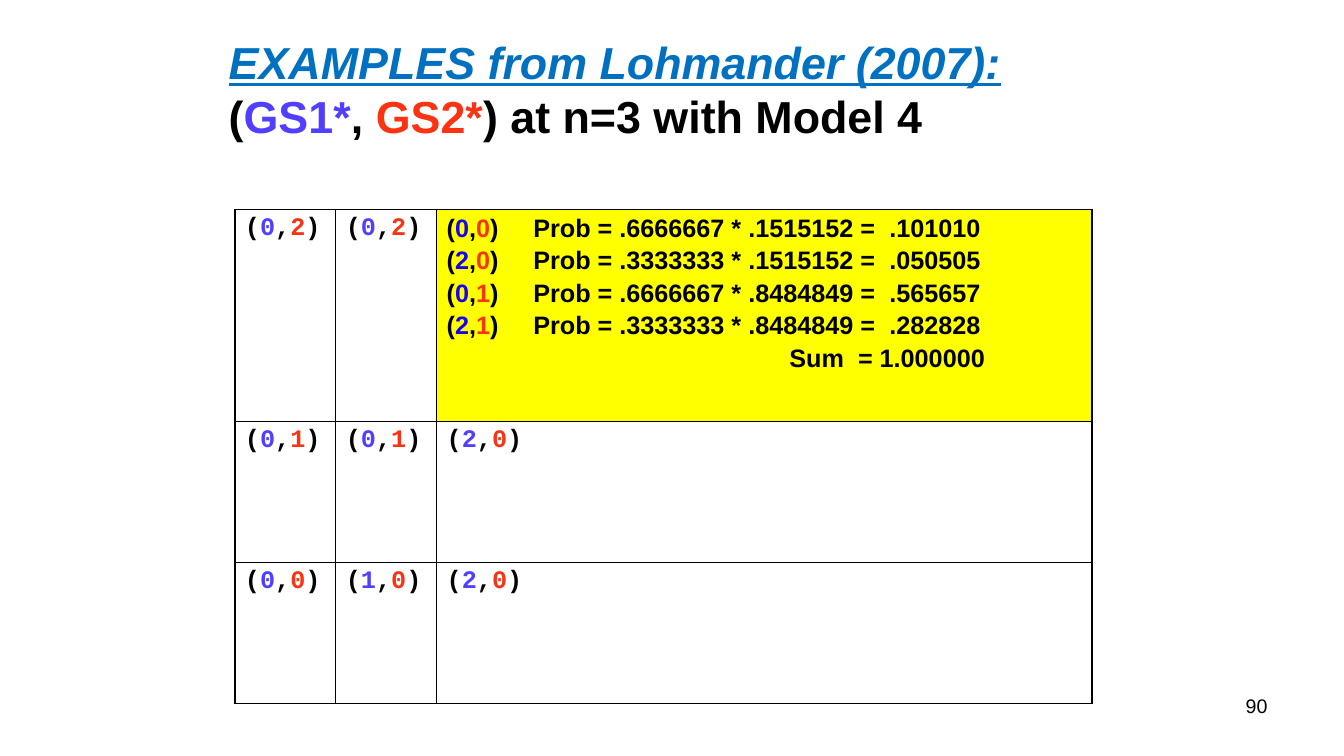
from lxml import etree
from pptx import Presentation
from pptx.dml.color import RGBColor
from pptx.enum.text import MSO_ANCHOR, PP_ALIGN
from pptx.oxml.ns import qn
from pptx.util import Inches, Pt

MIDDLE = MSO_ANCHOR.MIDDLE
RIGHT = PP_ALIGN.RIGHT

BLACK = RGBColor(0x00, 0x00, 0x00)
TITLE_BLUE = RGBColor(0x00, 0x70, 0xC0)
VIOLET = RGBColor(0x51, 0x3F, 0xFF)
DEEP_BLUE = RGBColor(0x17, 0x00, 0xF6)
RED = RGBColor(0xFA, 0x33, 0x12)
YELLOW = RGBColor(0xFF, 0xFF, 0x00)

HEADING = "EXAMPLES from Lohmander (2007):"
SUBHEADING = [("(", BLACK), ("GS1*", VIOLET), (", ", BLACK), ("GS2*", RED),
              (") at n=3 with Model 4", BLACK)]
PAGE_NUMBER = "90"

# Strategy pairs by row and column; None is the cell with the probabilities
PAIRS = [
    [(0, 2), (0, 2), None],
    [(0, 1), (0, 1), (2, 0)],
    [(0, 0), (1, 0), (2, 0)],
]
PROBABILITIES = [
    ((0, 0), ".6666667", ".1515152", ".101010"),
    ((2, 0), ".3333333", ".1515152", ".050505"),
    ((0, 1), ".6666667", ".8484849", ".565657"),
    ((2, 1), ".3333333", ".8484849", ".282828"),
]
SUM_LINE = "Sum\t= 1.000000"

TABLE_LEFT, TABLE_TOP = 2.33, 2.08
COLUMN_WIDTHS = [1, 1, 6.5]
ROW_HEIGHTS = [2.1, 1.4, 1.4]
PROB_TABS = [0.86, 4.39]
SUM_TABS = [3.4, 4.08]

TITLE_FORMAT = {"name": "Arial", "size": Pt(32), "bold": True}
HEADING_FORMAT = {**TITLE_FORMAT, "italic": True, "underline": True}
PAIR_FORMAT = {"name": "Courier New", "size": Pt(18), "bold": True}
PROB_FORMAT = {**PAIR_FORMAT, "name": "Arial"}
NUMBER_FORMAT = {"name": "Arial", "size": Pt(14)}


def add_spans(para, spans, text_format):
    for text, color in spans:
        span = para.add_run()
        span.text = text
        span.font.color.rgb = color
        for key, value in text_format.items():
            setattr(span.font, key, value)


def pair_spans(pair, first_color, tail=""):
    first, second = pair
    return [("(", BLACK), (str(first), first_color), (",", BLACK),
            (str(second), RED), (")" + tail, BLACK)]


def set_tabs(para, stops):
    tabs = etree.SubElement(para._p.get_or_add_pPr(), qn("a:tabLst"))
    for stop in stops:
        etree.SubElement(tabs, qn("a:tab"), pos=str(Inches(stop)), algn="l")


def set_borders(cell):
    """Draw a thin black line on all four sides."""
    properties = cell._tc.get_or_add_tcPr()
    for index, side in enumerate(("lnL", "lnR", "lnT", "lnB")):
        line = etree.Element(qn("a:" + side), w=str(Pt(1)))
        fill = etree.SubElement(line, qn("a:solidFill"))
        etree.SubElement(fill, qn("a:srgbClr"), val=str(BLACK))
        properties.insert(index, line)


def fill_probabilities(frame):
    lines = [
        (pair_spans(pair, DEEP_BLUE, f"\tProb = {p} * {q} =\t{product}"), PROB_TABS)
        for pair, p, q, product in PROBABILITIES
    ]
    lines.append(([("\t" + SUM_LINE, BLACK)], SUM_TABS))
    for index, (spans, stops) in enumerate(lines):
        para = frame.add_paragraph() if index else frame.paragraphs[0]
        set_tabs(para, stops)
        if index:
            para.space_before = Pt(3)
        add_spans(para, spans, PROB_FORMAT)


def add_title(page):
    box = page.shapes.add_textbox(Inches(2.17), Inches(0.29), Inches(7.93), Inches(1.18))
    frame = box.text_frame
    frame.word_wrap = False
    frame.vertical_anchor = MIDDLE
    add_spans(frame.paragraphs[0], [(HEADING, TITLE_BLUE)], HEADING_FORMAT)
    add_spans(frame.add_paragraph(), SUBHEADING, TITLE_FORMAT)


def add_pair_table(page):
    table = page.shapes.add_table(
        len(ROW_HEIGHTS), len(COLUMN_WIDTHS), Inches(TABLE_LEFT), Inches(TABLE_TOP),
        Inches(sum(COLUMN_WIDTHS)), Inches(sum(ROW_HEIGHTS))).table
    table.first_row = table.horz_banding = False
    for column, width in zip(table.columns, COLUMN_WIDTHS):
        column.width = Inches(width)
    for row, height, pairs in zip(table.rows, ROW_HEIGHTS, PAIRS):
        row.height = Inches(height)
        for cell, pair in zip(row.cells, pairs):
            if pair is None:
                cell.fill.solid()
                cell.fill.fore_color.rgb = YELLOW
                fill_probabilities(cell.text_frame)
            else:
                cell.fill.background()
                add_spans(cell.text_frame.paragraphs[0],
                          pair_spans(pair, VIOLET), PAIR_FORMAT)
            set_borders(cell)


def add_page_number(page):
    box = page.shapes.add_textbox(Inches(9.56), Inches(6.83), Inches(3.11), Inches(0.52))
    box.text_frame.word_wrap = True
    para = box.text_frame.paragraphs[0]
    para.alignment = RIGHT
    add_spans(para, [(PAGE_NUMBER, BLACK)], NUMBER_FORMAT)


def main():
    deck = Presentation()
    deck.slide_width, deck.slide_height = Inches(13.33), Inches(7.5)
    page = deck.slides.add_slide(deck.slide_layouts[6])
    add_page_number(page)
    add_title(page)
    add_pair_table(page)
    deck.save("out.pptx")


if __name__ == "__main__":
    main()
